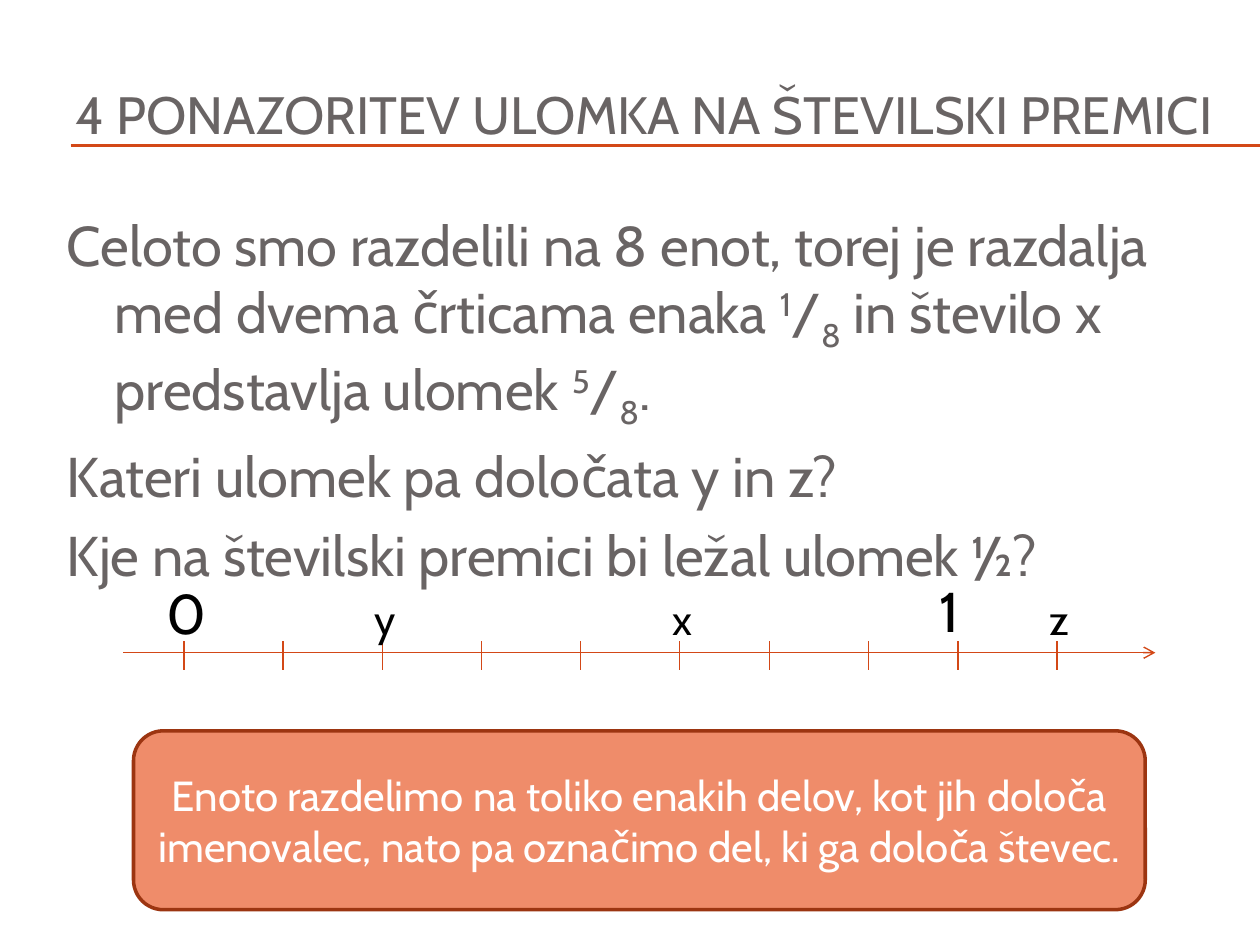
from itertools import accumulate

from lxml import etree
from pptx import Presentation
from pptx import util as u
from pptx.dml.color import RGBColor
from pptx.enum import shapes, text
from pptx.oxml.ns import qn

COLORS = {"text": "696464", "accent": "D34817", "label": "000000",
          "note_fill": "EF8C6A", "note_line": "9C3511", "note_text": "FFFFFF"}
FONT = "Cabin"

TITLE = "4 PONAZORITEV ULOMKA NA ŠTEVILSKI PREMICI"
# Each paragraph is a list of (wording, baseline shift in percent).
BODY = [
    [("Celoto smo razdelili na 8 enot, torej je razdalja med dvema črticama enaka ", 0),
     ("1", 30), ("/", 0), ("8", -25),
     (" in število x predstavlja ulomek ", 0),
     ("5", 30), ("/", 0), ("8", -25), (".", 0)],
    [("Kateri ulomek pa določata y in z?", 0)],
    [("Kje na številski premici bi ležal ulomek ½?", 0)],
]
NOTE = ("Enoto razdelimo na toliko enakih delov, kot jih določa imenovalec, "
        "nato pa označimo del, ki ga določa števec.")
# Wording, left, top, width, height, text size
LABELS = [
    ("0", 1.22, 4.54, 0.47, 0.64, 32),
    ("y", 2.87, 4.66, 0.39, 0.5, 24),
    ("x", 5.24, 4.66, 0.39, 0.5, 24),
    ("1", 7.36, 4.53, 0.39, 0.64, 32),
    ("z", 8.23, 4.66, 0.39, 0.5, 24),
]
RULE_HEIGHTS = (1.15, 1.16)
AXIS_Y, AXIS_ENDS = 5.18, (0.98, 9.17)
TICK_TOP, TICK_BOTTOM = 5.09, 5.32
WIDE, NARROW = 0.787, 0.71
TICKS = accumulate([1.46] + [WIDE] * 5 + [NARROW, WIDE] * 2)


def rgb(name):
    return RGBColor.from_string(COLORS[name])


def place(shape, *box):
    for side, value in zip(("left", "top", "width", "height"), box):
        setattr(shape, side, u.Inches(value))


def set_frame(frame, anchor):
    settings = {"word_wrap": True, "auto_size": text.MSO_AUTO_SIZE.NONE,
                "vertical_anchor": anchor}
    for key, value in settings.items():
        setattr(frame, key, value)


def add_span(para, wording, size, color, shift=0):
    span = para.add_run()
    span.text = wording
    for key, value in {"name": FONT, "size": u.Pt(size), "bold": False}.items():
        setattr(span.font, key, value)
    span.font.color.rgb = rgb(color)
    if shift:
        span._r.get_or_add_rPr().set("baseline", str(shift * 1000))


def add_line(page, x1, y1, x2, y2, width=0.79):
    line = page.shapes.add_connector(
        shapes.MSO_CONNECTOR.STRAIGHT, *map(u.Inches, (x1, y1, x2, y2)))
    line.line.color.rgb = rgb("accent")
    line.line.width = u.Pt(width)
    etree.SubElement(line._element.spPr, qn("a:effectLst"))
    return line


def add_title(page):
    title = page.shapes.title
    place(title, 0.5, 0.44, 9.5, 0.92)
    set_frame(title.text_frame, text.MSO_ANCHOR.MIDDLE)
    para = title.text_frame.paragraphs[0]
    para.alignment = text.PP_ALIGN.LEFT
    add_span(para, TITLE, 30, "text")


def add_body(page):
    body = page.placeholders[1]
    place(body, 0.43, 1.62, 9.29, 5.59)
    frame = body.text_frame
    set_frame(frame, text.MSO_ANCHOR.TOP)
    for index, spans in enumerate(BODY):
        para = frame.add_paragraph() if index else frame.paragraphs[0]
        props = para._p.get_or_add_pPr()
        props.set("marL", str(u.Inches(0.38)))
        props.set("indent", str(u.Inches(-0.38)))
        etree.SubElement(props, qn("a:buNone"))
        para.space_before = u.Pt(6.4 if index else 0)
        for wording, shift in spans:
            add_span(para, wording, 32, "text", shift)


def add_number_line(page):
    for x in TICKS:
        add_line(page, x, TICK_TOP, x, TICK_BOTTOM)
    axis = add_line(page, AXIS_ENDS[0], AXIS_Y, AXIS_ENDS[1], AXIS_Y)
    etree.SubElement(axis.line._get_or_add_ln(), qn("a:tailEnd"), type="arrow")
    for wording, *box, size in LABELS:
        label = page.shapes.add_textbox(*map(u.Inches, box))
        set_frame(label.text_frame, text.MSO_ANCHOR.TOP)
        add_span(label.text_frame.paragraphs[0], wording, size, "label")


def add_note(page):
    note = page.shapes.add_shape(
        shapes.MSO_SHAPE.ROUNDED_RECTANGLE,
        *map(u.Inches, (1.06, 5.8, 8.03, 1.42)))
    note.shadow.inherit = False
    note.fill.solid()
    note.fill.fore_color.rgb = rgb("note_fill")
    note.line.color.rgb = rgb("note_line")
    note.line.width = u.Pt(2)
    set_frame(note.text_frame, text.MSO_ANCHOR.MIDDLE)
    para = note.text_frame.paragraphs[0]
    para.alignment = text.PP_ALIGN.CENTER
    add_span(para, NOTE, 24, "note_text")


def main():
    deck = Presentation()
    deck.slide_width, deck.slide_height = u.Inches(10), u.Inches(7.5)
    page = deck.slides.add_slide(deck.slide_layouts[1])
    for y in RULE_HEIGHTS:
        add_line(page, 0.56, y, 10, y, 0.75)
    add_title(page)
    add_body(page)
    add_number_line(page)
    add_note(page)
    deck.save("out.pptx")


if __name__ == "__main__":
    main()
